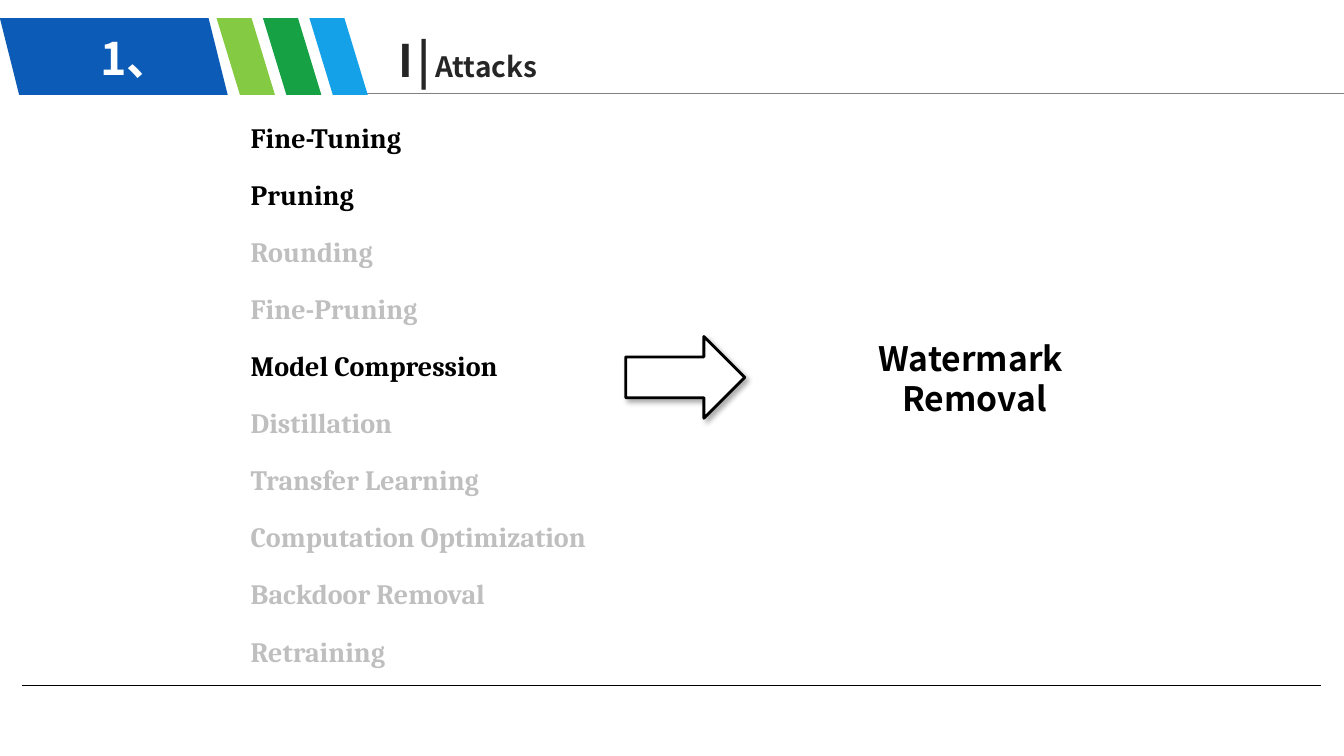
from typing import NamedTuple

from lxml import etree
from pptx import Presentation
from pptx import util as u
from pptx.dml.color import RGBColor
from pptx.enum import shapes, text
from pptx.oxml import ns, parse_xml

SANS = "Noto Sans CJK SC"
SERIF = "Cambria"
BLACK, WHITE, GREY = "000000", "FFFFFF", "BFBFBF"


class Box(NamedTuple):
    left: float
    top: float
    width: float
    height: float


class Banner(NamedTuple):
    left: float
    width: float
    slant: float
    color: str


class Attack(NamedTuple):
    name: str
    active: bool = False


BANNER_TOP, BANNER_HEIGHT = 0.46, 1.93
STRIPE_LEFT, STRIPE_STEP = 5.46, 1.17
BANNERS = [Banner(0, 5.74, 0.25, "0C5BB6")] + [
    Banner(STRIPE_LEFT + index * STRIPE_STEP, 1.47, 0.4, color)
    for index, color in enumerate(["84CA43", "16A244", "15A1E8"])
]
ATTACKS = [
    Attack("Fine-Tuning", True),
    Attack("Pruning", True),
    Attack("Rounding"),
    Attack("Fine-Pruning"),
    Attack("Model Compression", True),
    Attack("Distillation"),
    Attack("Transfer Learning"),
    Attack("Computation Optimization"),
    Attack("Backdoor Removal"),
    Attack("Retraining"),
]


def rgb(color: str) -> RGBColor:
    return RGBColor.from_string(color)


def lengths(box: Box) -> list:
    return [u.Cm(value) for value in box]


def add_line(slide, start_x: float, end_x: float, y: float, color: str) -> None:
    line = slide.shapes.add_connector(
        shapes.MSO_CONNECTOR.STRAIGHT, u.Cm(start_x), u.Cm(y), u.Cm(end_x), u.Cm(y)
    )
    line.line.color.rgb = rgb(color)
    line.line.width = u.Pt(1)
    etree.SubElement(line._element.spPr, ns.qn("a:effectLst"))


def add_preset(slide, preset, box: Box, fill: str):
    shape = slide.shapes.add_shape(preset, *lengths(box))
    shape.shadow.inherit = False
    shape.fill.solid()
    shape.fill.fore_color.rgb = rgb(fill)
    shape.line.fill.background()
    return shape


def add_banner(slide, banner: Banner) -> None:
    box = Box(banner.left, BANNER_TOP, banner.width, BANNER_HEIGHT)
    shape = add_preset(slide, shapes.MSO_SHAPE.PARALLELOGRAM, box, banner.color)
    shape.adjustments[0] = banner.slant
    shape._element.spPr.xfrm.set("flipH", "1")


def add_text_frame(slide, box: Box, wrap: bool = True):
    frame = slide.shapes.add_textbox(*lengths(box)).text_frame
    frame.word_wrap = wrap
    return frame


def add_paragraph(frame, words: str, size: float, font: str, color: str, align):
    first = frame.paragraphs[0]
    paragraph = first if not first.runs else frame.add_paragraph()
    paragraph.alignment = align
    paragraph.font.size = u.Pt(size)
    paragraph.font.name = font
    paragraph.font.bold = True
    paragraph.font.color.rgb = rgb(color)
    east_asian = etree.SubElement(paragraph.font._element, ns.qn("a:ea"))
    east_asian.set("typeface", font)
    paragraph.add_run().text = words
    return paragraph


def add_arrow(slide, box: Box) -> None:
    arrow = add_preset(slide, shapes.MSO_SHAPE.RIGHT_ARROW, box, WHITE)
    arrow.line.color.rgb = rgb(BLACK)
    arrow.line.width = u.Pt(2)
    # Soft shadow to the lower right
    effects = arrow._element.spPr.find(ns.qn("a:effectLst"))
    effects.append(parse_xml(
        f'<a:outerShdw {ns.nsdecls("a")} blurRad="{u.Pt(4)}" dist="{u.Pt(3)}" '
        f'dir="2700000" algn="tl" rotWithShape="0"><a:srgbClr val="{BLACK}">'
        '<a:alpha val="32000"/></a:srgbClr></a:outerShdw>'
    ))


def main() -> None:
    presentation = Presentation()
    presentation.slide_width = u.Cm(33.87)
    presentation.slide_height = u.Cm(19.05)
    slide = presentation.slides.add_slide(presentation.slide_layouts[6])

    # Footer rule
    add_line(slide, 0.56, 33.3, 17.27, BLACK)

    # List of attacks
    attack_list = add_text_frame(slide, Box(6.07, 2.31, 9.47, 14.6))
    for attack in ATTACKS:
        color = BLACK if attack.active else GREY
        paragraph = add_paragraph(
            attack_list, attack.name, 20, SERIF, color, text.PP_ALIGN.JUSTIFY
        )
        paragraph.line_spacing = 1.7

    # Header banner
    add_line(slide, 8.89, 33.87, 2.36, "808080")
    for banner in BANNERS:
        add_banner(slide, banner)
    number = add_text_frame(slide, Box(1.55, 0.76, 3.76, 1.37))
    number.margin_left = number.margin_right = 0
    number.margin_top = number.margin_bottom = 0
    number.vertical_anchor = text.MSO_ANCHOR.MIDDLE
    add_paragraph(number, "1、", 32, SANS, WHITE, text.PP_ALIGN.CENTER)

    # Title
    title = add_text_frame(slide, Box(9.8, 0.71, 4.37, 1.63), wrap=False)
    heading = add_paragraph(title, "I|", 32, SANS, "262626", text.PP_ALIGN.LEFT)
    heading.runs[0].font._element.set("spc", "300")
    topic = heading.add_run()
    topic.text = "Attacks"
    topic.font.size = u.Pt(20)

    # Arrow to the outcome
    add_arrow(slide, Box(15.77, 8.48, 3, 2.06))
    outcome = add_text_frame(slide, Box(19.15, 8.38, 10.82, 2.31))
    for words in ("Watermark ", "Removal"):
        add_paragraph(outcome, words, 24, SANS, BLACK, text.PP_ALIGN.CENTER)

    presentation.save("out.pptx")


if __name__ == "__main__":
    main()
